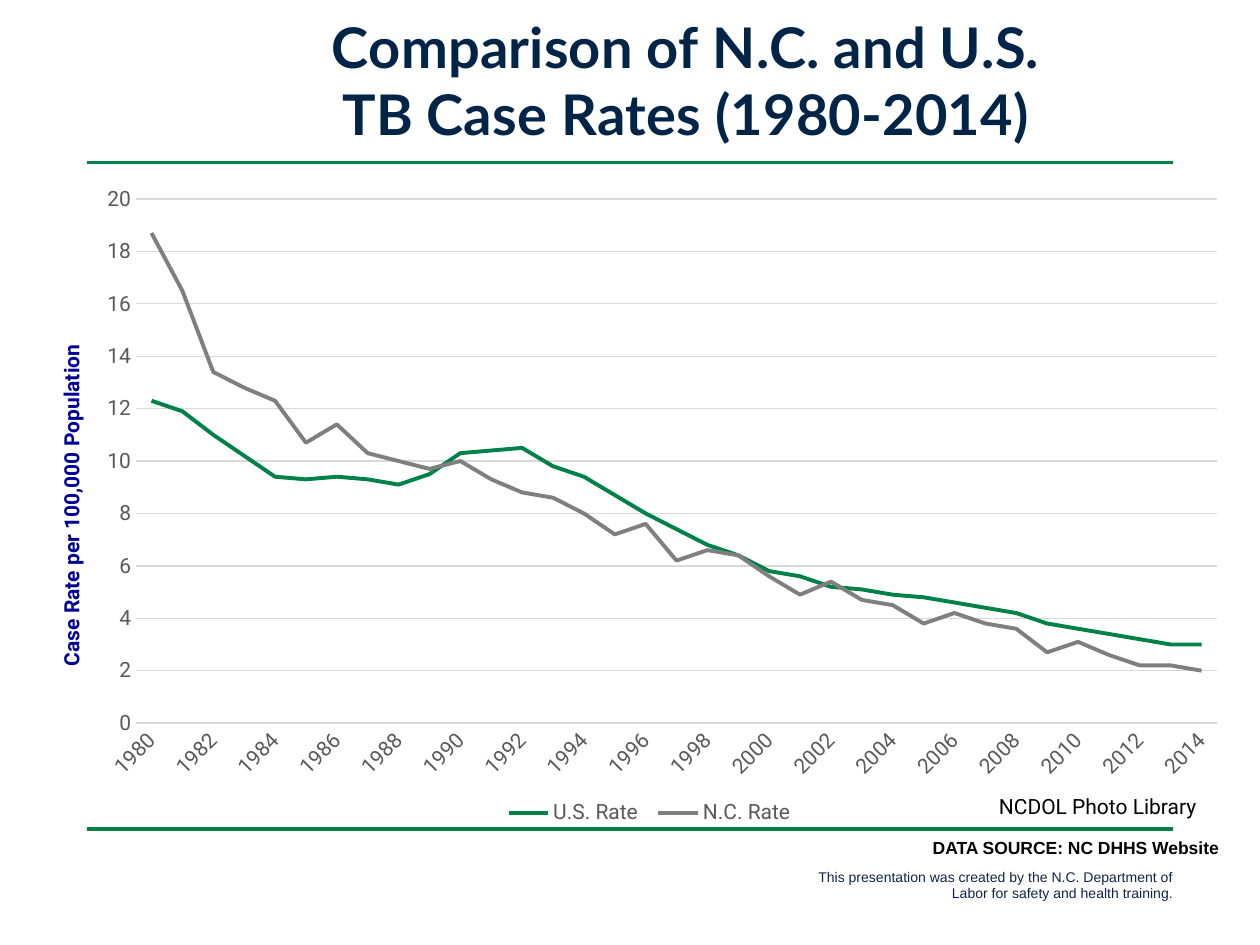
import dataclasses

import lxml.etree
import pptx
import pptx.chart.data
import pptx.dml.color
import pptx.enum.chart
import pptx.enum.shapes
import pptx.enum.text
import pptx.oxml.ns
import pptx.util

Inches = pptx.util.Inches
Pt = pptx.util.Pt
qn = pptx.oxml.ns.qn
Align = pptx.enum.text.PP_ALIGN
Anchor = pptx.enum.text.MSO_ANCHOR
Tick = pptx.enum.chart.XL_TICK_MARK

GREEN, GRAY, PALE, DARK = "00814A", "7F7F7F", "D9D9D9", "595959"
NAVY, BLUE, INK, BLACK = "012447", "000099", "102447", "000000"
CHART = (0.67, 0, 9.18, 6.67)
PLOT = (1.08, 1.58, 8.58, 4.16)
LEGEND = (3.93, 6.3, 2.45, 0.3)
TITLE = (2.6, 0.06)


@dataclasses.dataclass
class Rate:
    name: str
    color: str
    vals: list


@dataclasses.dataclass
class Note:
    text: str
    box: tuple
    color: str
    form: dict
    align: object = Align.LEFT
    anchor: object = Anchor.TOP
    wrap: bool = False
    turn: int = 0


RATES = [
    Rate("U.S. Rate", GREEN, [
        12.3, 11.9, 11, 10.2, 9.4, 9.3, 9.4, 9.3, 9.1, 9.5, 10.3, 10.4,
        10.5, 9.8, 9.4, 8.7, 8, 7.4, 6.8, 6.4, 5.8, 5.6, 5.2, 5.1, 4.9,
        4.8, 4.6, 4.4, 4.2, 3.8, 3.6, 3.4, 3.2, 3, 3]),
    Rate("N.C. Rate", GRAY, [
        18.7, 16.5, 13.4, 12.8, 12.3, 10.7, 11.4, 10.3, 10, 9.7, 10, 9.3,
        8.8, 8.6, 8, 7.2, 7.6, 6.2, 6.6, 6.4, 5.6, 4.9, 5.4, 4.7, 4.5,
        3.8, 4.2, 3.8, 3.6, 2.7, 3.1, 2.6, 2.2, 2.2, 2]),
]
AXIS = {"name": "Roboto", "size": Pt(12), "bold": False}
CREDIT = Note(
    "This presentation was created by the N.C. Department of Labor for "
    "safety and health training.",
    (6.16, 6.84, 3.25, 0.37), INK, {"name": "Arial", "size": Pt(8)},
    Align.RIGHT, wrap=True)
SOURCE = Note(
    "DATA SOURCE: NC DHHS Website", (7.05, 6.59, 2.72, 0.27), BLACK,
    {"name": "Arial", "size": Pt(10), "bold": True},
    Align.RIGHT, Anchor.MIDDLE, True)
LABEL = Note(
    "Case Rate per 100,000 Population", (-0.88, 3.79, 2.89, 0.3), BLUE,
    {**AXIS, "bold": True}, turn=270)
PHOTO = Note("NCDOL Photo Library", (7.83, 6.25, 1.83, 0.3), BLACK, AXIS)


def paint(color, code: str) -> None:
    color.rgb = pptx.dml.color.RGBColor.from_string(code)


def apply(item, form: dict) -> None:
    for key, val in form.items():
        setattr(item, key, val)


def style(font, form: dict, code: str) -> None:
    apply(font, form)
    paint(font.color, code)


def stroke(line, code: str, width: float) -> None:
    line.width = Pt(width)
    paint(line.color, code)


def add_rule(slide, top: float) -> None:
    rule = slide.shapes.add_connector(
        pptx.enum.shapes.MSO_CONNECTOR.STRAIGHT,
        Inches(0.69), Inches(top), Inches(9.31), Inches(top))
    stroke(rule.line, GREEN, 2)
    lxml.etree.SubElement(rule._element.spPr, qn("a:effectLst"))


def add_note(slide, note: Note) -> None:
    shape = slide.shapes.add_textbox(*map(Inches, note.box))
    shape.rotation = note.turn
    frame = shape.text_frame
    apply(frame, {"word_wrap": note.wrap, "vertical_anchor": note.anchor,
                  "text": note.text})
    para = frame.paragraphs[0]
    para.alignment = note.align
    style(para.runs[0].font, note.form, note.color)


def place(node, box: tuple, index: int = 0, inner: bool = False) -> None:
    layout = node.find(qn("c:layout"))
    if layout is None:
        layout = lxml.etree.Element(qn("c:layout"))
        node.insert(index, layout)
    left, top, width, height = CHART
    spots = {"layoutTarget": "inner"} if inner else {}
    spots.update(xMode="edge", yMode="edge")
    spots.update(x=(box[0] - left) / width, y=(box[1] - top) / height)
    if len(box) == 4:
        spots.update(w=box[2] / width, h=box[3] / height)
    manual = lxml.etree.SubElement(layout, qn("c:manualLayout"))
    for key, val in spots.items():
        lxml.etree.SubElement(manual, qn("c:" + key)).set("val", str(val))


def add_title(chart) -> None:
    title = chart.chart_title
    frame = title.text_frame
    frame.text = "Comparison of N.C. and U.S.\nTB Case Rates (1980-2014)"
    for para in frame.paragraphs:
        para.alignment = Align.CENTER
        form = {"name": "Lato", "size": Pt(32), "bold": True}
        style(para.runs[0].font, form, NAVY)
    place(title._element, TITLE)


def add_legend(chart) -> None:
    chart.has_legend = True
    legend = chart.legend
    apply(legend, {
        "position": pptx.enum.chart.XL_LEGEND_POSITION.BOTTOM,
        "include_in_layout": False})
    style(legend.font, AXIS, DARK)
    place(legend._element, LEGEND, index=1)


def format_axes(chart) -> None:
    years, rates = chart.category_axis, chart.value_axis
    for axis in (years, rates):
        apply(axis, {"major_tick_mark": Tick.NONE,
                     "minor_tick_mark": Tick.NONE})
        style(axis.tick_labels.font, AXIS, DARK)
    stroke(years.format.line, PALE, 0.75)
    years.has_major_gridlines = False
    years._element.txPr.bodyPr.set("rot", "-2700000")
    skip = lxml.etree.Element(qn("c:tickLblSkip"))
    skip.set("val", "2")
    years._element.find(qn("c:noMultiLvlLbl")).addprevious(skip)
    apply(rates, {"minimum_scale": 0, "maximum_scale": 20, "major_unit": 2,
                  "has_major_gridlines": True})
    rates.format.line.fill.background()
    stroke(rates.major_gridlines.format.line, PALE, 0.75)


def add_rates(slide) -> None:
    data = pptx.chart.data.CategoryChartData()
    data.categories = [str(year) for year in range(1980, 2015)]
    for rate in RATES:
        data.add_series(rate.name, rate.vals)
    chart = slide.shapes.add_chart(
        pptx.enum.chart.XL_CHART_TYPE.LINE, *map(Inches, CHART), data).chart
    style(chart.font, {"name": "Roboto", "size": Pt(10)}, BLACK)
    add_title(chart)
    format_axes(chart)
    for line, rate in zip(chart.plots[0].series, RATES):
        line.smooth = False
        line.marker.style = pptx.enum.chart.XL_MARKER_STYLE.NONE
        stroke(line.format.line, rate.color, 2.25)
    chart.plots[0].vary_by_categories = False
    add_legend(chart)
    place(chart._chartSpace.find(".//" + qn("c:plotArea")), PLOT, inner=True)


def main() -> None:
    deck = pptx.Presentation()
    apply(deck, {"slide_width": Inches(10), "slide_height": Inches(7.5)})
    slide = deck.slides.add_slide(deck.slide_layouts[6])
    for top in (1.29, 6.58):
        add_rule(slide, top)
    for note in (CREDIT, SOURCE):
        add_note(slide, note)
    add_rates(slide)
    for note in (LABEL, PHOTO):
        add_note(slide, note)
    deck.save("out.pptx")


if __name__ == "__main__":
    main()
